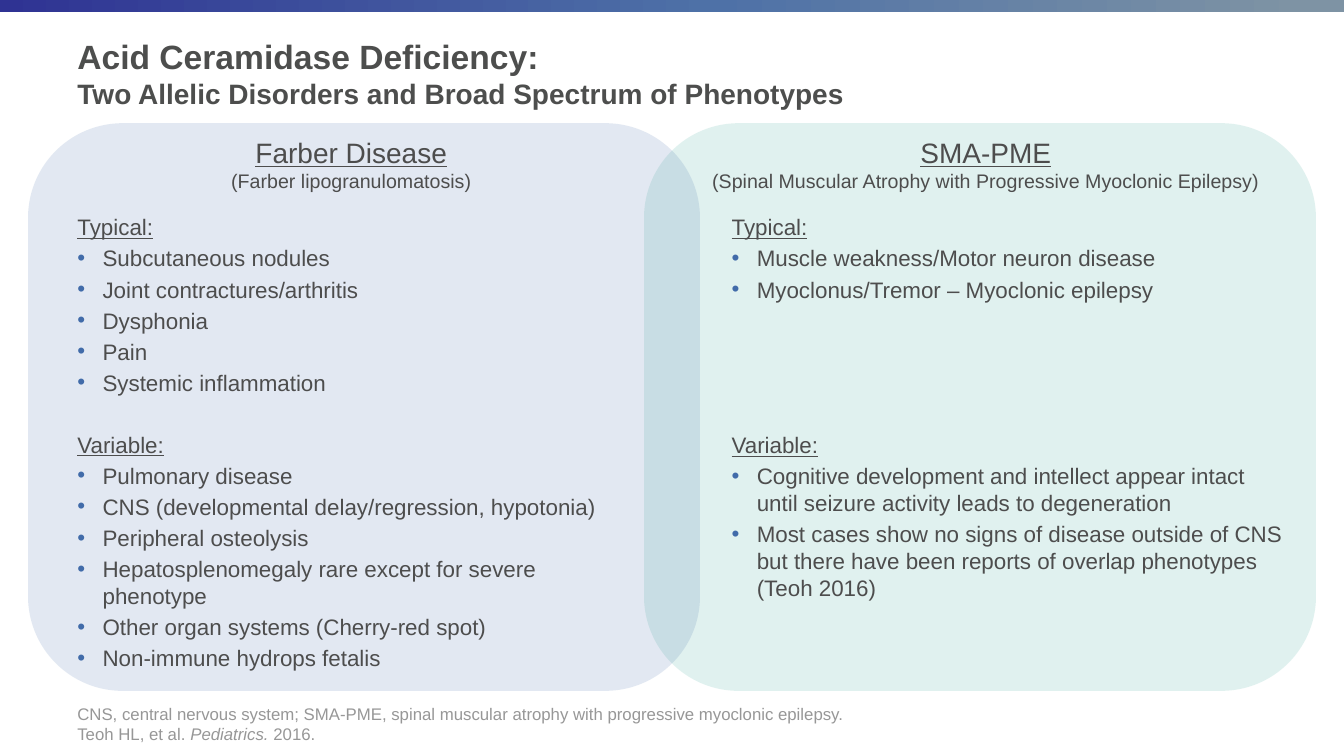
from lxml import etree
from pptx import Presentation
from pptx import util as u
from pptx.dml import color
from pptx.enum import shapes, text
from pptx.oxml import ns

FONT = "Arial"
DARK, TITLE, GREY = "4D4D4D", "4D4E4D", "979797"
BLUE, GREEN = "416BA9", "35A696"
BAR_STOPS = [(0, "2F3393"), (53, "4E71A7"), (97, "7E93A4")]
LINE_GAP = 3
PANEL_TOP, PANEL_WIDTH, PANEL_HEIGHT = 88, 480, 405.5
BODY_TOP, BODY_WIDTH, BODY_HEIGHT = 149, 408, 368
HEADING_TOP, HEADING_HEIGHT = 93, 48

COLUMNS = [
    dict(
        panel_left=460, color=GREEN, body_left=515.5,
        heading_left=500.4, heading_width=407.5,
        heading="SMA-PME",
        subheading="(Spinal Muscular Atrophy with Progressive Myoclonic Epilepsy)",
        variable_gap=92,
        typical=[
            "Muscle weakness/Motor neuron disease",
            "Myoclonus/Tremor – Myoclonic epilepsy",
        ],
        variable=[
            "Cognitive development and intellect appear intact until seizure "
            "activity leads to degeneration",
            "Most cases show no signs of disease outside of CNS but there have "
            "been reports of overlap phenotypes (Teoh 2016)",
        ],
    ),
    dict(
        panel_left=20, color=BLUE, body_left=48.2,
        heading_left=157.7, heading_width=186.5,
        heading="Farber Disease",
        subheading="(Farber lipogranulomatosis)",
        variable_gap=25,
        typical=[
            "Subcutaneous nodules",
            "Joint contractures/arthritis",
            "Dysphonia",
            "Pain",
            "Systemic inflammation",
        ],
        variable=[
            "Pulmonary disease",
            "CNS (developmental delay/regression, hypotonia)",
            "Peripheral osteolysis",
            "Hepatosplenomegaly rare except for severe phenotype",
            "Other organ systems (Cherry-red spot)",
            "Non-immune hydrops fetalis",
        ],
    ),
]


def rgb(value):
    return color.RGBColor.from_string(value)


def add_child(parent, tag, **attributes):
    return etree.SubElement(parent, ns.qn(tag), attributes)


def write(paragraph, words, size=16, hue=DARK, bold=False, italic=False, underline=False):
    """Append one formatted run to the paragraph."""
    run = paragraph.add_run()
    run.text = words
    font = run.font
    font.name, font.size, font.color.rgb = FONT, u.Pt(size), rgb(hue)
    font.bold, font.italic, font.underline = bold, italic, underline


class SlideBuilder:
    def __init__(self, slide):
        self.slide = slide

    def shape(self, kind, left, top, width, height):
        shape = self.slide.shapes.add_shape(
            kind, u.Pt(left), u.Pt(top), u.Pt(width), u.Pt(height))
        shape.shadow.inherit = False
        shape.line.fill.background()
        return shape

    def gradient_bar(self, width, height, stops):
        bar = self.shape(shapes.MSO_SHAPE.RECTANGLE, 0, 0, width, height)
        bar.fill.gradient()
        bar.fill.gradient_angle = 0
        stop_list = bar.fill._fill._gradFill.find(ns.qn("a:gsLst"))
        for stop in list(stop_list):
            stop_list.remove(stop)
        for percent, hue in stops:
            stop = add_child(stop_list, "a:gs", pos=str(percent * 1000))
            add_child(stop, "a:srgbClr", val=hue)

    def panel(self, left, hue, opacity=15):
        panel = self.shape(shapes.MSO_SHAPE.ROUNDED_RECTANGLE,
                           left, PANEL_TOP, PANEL_WIDTH, PANEL_HEIGHT)
        panel.fill.solid()
        panel.fill.fore_color.rgb = rgb(hue)
        fill_color = panel._element.spPr.find(".//" + ns.qn("a:srgbClr"))
        add_child(fill_color, "a:alpha", val=str(opacity * 1000))

    def text_box(self, left, top, width, height, wrap=True,
                 anchor=text.MSO_ANCHOR.TOP):
        box = self.slide.shapes.add_textbox(
            u.Pt(left), u.Pt(top), u.Pt(width), u.Pt(height))
        frame = box.text_frame
        frame.word_wrap, frame.vertical_anchor = wrap, anchor
        return frame

    def paragraph(self, frame, space_before=0, align=text.PP_ALIGN.LEFT):
        """Return the frame's unused first paragraph, or a new one."""
        first = frame.paragraphs[0]
        paragraph = frame.add_paragraph() if first.runs else first
        paragraph.space_before, paragraph.alignment = u.Pt(space_before), align
        return paragraph

    def bullet(self, frame, words):
        paragraph = self.paragraph(frame, LINE_GAP)
        properties = paragraph._p.get_or_add_pPr()
        properties.set("marL", str(u.Pt(18)))
        properties.set("indent", str(u.Pt(-18)))
        add_child(add_child(properties, "a:buClr"), "a:srgbClr", val=BLUE)
        add_child(properties, "a:buFont", typeface=FONT)
        add_child(properties, "a:buChar", char="•")
        write(paragraph, words)

    def column(self, column):
        self.panel(column["panel_left"], column["color"])

        body = self.text_box(column["body_left"], BODY_TOP, BODY_WIDTH, BODY_HEIGHT)
        sections = [("Typical:", LINE_GAP, column["typical"]),
                    ("Variable:", column["variable_gap"], column["variable"])]
        for label, gap, findings in sections:
            write(self.paragraph(body, gap), label, underline=True)
            for finding in findings:
                self.bullet(body, finding)

        heading = self.text_box(column["heading_left"], HEADING_TOP,
                                column["heading_width"], HEADING_HEIGHT, wrap=False)
        center = text.PP_ALIGN.CENTER
        write(self.paragraph(heading, align=center), column["heading"],
              size=20, underline=True)
        write(self.paragraph(heading, align=center), column["subheading"], size=14)

    def title(self, headline, subtitle):
        frame = self.text_box(48.2, 16, 846, 72, anchor=text.MSO_ANCHOR.MIDDLE)
        for words, size in [(headline, 24), (subtitle, 20)]:
            write(self.paragraph(frame), words, size=size, hue=TITLE, bold=True)

    def footnote(self):
        frame = self.text_box(48.2, 500.4, 828, 34.6, anchor=text.MSO_ANCHOR.BOTTOM)
        style = dict(size=12, hue=GREY)
        write(self.paragraph(frame),
              "CNS, central nervous system; SMA-PME, spinal muscular atrophy "
              "with progressive myoclonic epilepsy.", **style)
        citation = self.paragraph(frame)
        write(citation, "Teoh HL, et al. ", **style)
        write(citation, "Pediatrics. ", italic=True, **style)
        write(citation, "2016.", **style)


def main():
    presentation = Presentation()
    presentation.slide_width, presentation.slide_height = u.Pt(960), u.Pt(540)
    builder = SlideBuilder(presentation.slides.add_slide(presentation.slide_layouts[6]))
    builder.gradient_bar(960, 8.6, BAR_STOPS)
    for column in COLUMNS:
        builder.column(column)
    builder.title("Acid Ceramidase Deficiency:",
                  "Two Allelic Disorders and Broad Spectrum of Phenotypes")
    builder.footnote()
    presentation.save("out.pptx")


if __name__ == "__main__":
    main()
